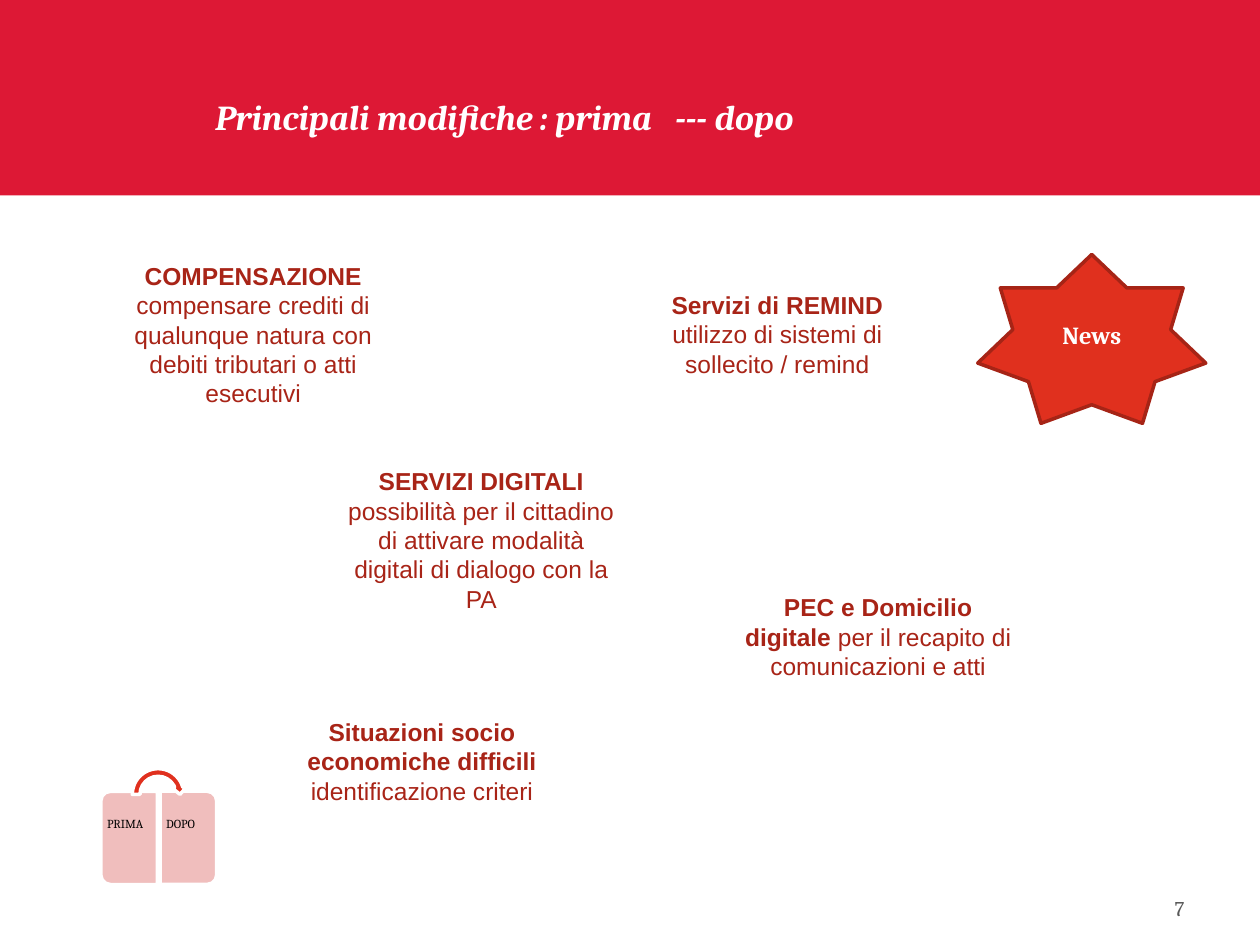
from collections import namedtuple
from dataclasses import dataclass

from lxml import etree
from pptx import Presentation
from pptx.dml.color import RGBColor
from pptx.enum.shapes import MSO_SHAPE
from pptx.enum.text import MSO_ANCHOR, MSO_AUTO_SIZE, PP_ALIGN
from pptx.oxml.ns import qn
from pptx.util import Inches, Pt

RECTANGLE = MSO_SHAPE.RECTANGLE
STAR = MSO_SHAPE.STAR_7_POINT
HALF_PANEL = MSO_SHAPE.ROUND_2_SAME_RECTANGLE
CIRCULAR_ARROW = MSO_SHAPE.CIRCULAR_ARROW
LEFT, CENTER, RIGHT = PP_ALIGN.LEFT, PP_ALIGN.CENTER, PP_ALIGN.RIGHT
TOP, MIDDLE, BOTTOM = MSO_ANCHOR.TOP, MSO_ANCHOR.MIDDLE, MSO_ANCHOR.BOTTOM
NO_AUTOFIT = MSO_AUTO_SIZE.NONE
TITLE_ONLY = 5

Box = namedtuple("Box", "left top width height")


@dataclass(frozen=True)
class Theme:
    banner: str = "DD1835"
    accent: str = "E0301E"
    accent_line: str = "A62416"
    topic: str = "A82417"
    panel: str = "F0BEBD"
    white: str = "FFFFFF"
    black: str = "000000"
    grey: str = "595959"
    serif: str = "Cambria"
    sans: str = "Arial"
    title_size: int = 20
    body_size: int = 14
    number_size: int = 12
    label_size: int = 7
    line_width: int = 2


THEME = Theme()

TOPICS = [
    (0.83, 2.02, 1.28, "COMPENSAZIONE",
     "compensare crediti di qualunque natura con debiti tributari o atti esecutivi"),
    (2.64, 3.65, 1.28, "SERVIZI DIGITALI",
     "possibilità per il cittadino di attivare modalità digitali di dialogo con la PA"),
    (4.99, 2.25, 0.81, "Servizi di REMIND", "utilizzo di sistemi di sollecito / remind"),
    (2.17, 5.64, 0.81, "Situazioni socio economiche difficili", "identificazione criteri"),
    (5.79, 4.65, 0.81, "PEC e Domicilio digitale", "per il recapito di comunicazioni e atti"),
]
TOPIC_WIDTH = 2.36


def inches(box):
    return [Inches(length) for length in box]


def add_run(paragraph, text, color, **font_format):
    run = paragraph.add_run()
    run.text = text
    for name, value in font_format.items():
        setattr(run.font, name, value)
    run.font.color.rgb = RGBColor.from_string(color)


def format_frame(text_frame, **frame_format):
    settings = {"word_wrap": True, "auto_size": NO_AUTOFIT, **frame_format}
    for name, value in settings.items():
        setattr(text_frame, name, value)


def add_text_box(shapes, box, alignment, **frame_format):
    text_frame = shapes.add_textbox(*inches(box)).text_frame
    format_frame(text_frame, **frame_format)
    paragraph = text_frame.paragraphs[0]
    paragraph.alignment = alignment
    return paragraph


def add_filled_shape(shapes, kind, box, fill, line=None):
    shape = shapes.add_shape(kind, *inches(box))
    shape.shadow.inherit = False
    shape.fill.solid()
    shape.fill.fore_color.rgb = RGBColor.from_string(fill)
    if line:
        shape.line.color.rgb = RGBColor.from_string(line)
        shape.line.width = Pt(THEME.line_width)
    else:
        shape.line.fill.background()
    return shape


def add_banner(slide, box):
    banner = add_filled_shape(slide.shapes, RECTANGLE, box, THEME.banner)
    slide.shapes._spTree.insert(2, banner._element)


def add_title(slide, box, tab_position):
    title = slide.shapes.title
    for name, length in zip(box._fields, inches(box)):
        setattr(title, name, length)
    format_frame(title.text_frame, vertical_anchor=BOTTOM)
    paragraph = title.text_frame.paragraphs[0]
    tabs = etree.SubElement(paragraph._p.get_or_add_pPr(), qn("a:tabLst"))
    etree.SubElement(tabs, qn("a:tab"), pos=str(Inches(tab_position)), algn="l")
    paragraph.alignment = LEFT
    add_run(paragraph, "Principali modifiche : prima\t--- dopo", THEME.white,
            name=THEME.serif, size=Pt(THEME.title_size), bold=True, italic=True)


def add_topic(slide, box, heading, detail):
    paragraph = add_text_box(slide.shapes, box, CENTER)
    for text, bold in ((heading + " ", True), (detail, False)):
        add_run(paragraph, text, THEME.topic, name=THEME.sans,
                size=Pt(THEME.body_size), bold=bold)


def add_news_star(slide, box):
    star = add_filled_shape(slide.shapes, STAR, box, THEME.accent, THEME.accent_line)
    format_frame(star.text_frame, vertical_anchor=MIDDLE)
    paragraph = star.text_frame.paragraphs[0]
    paragraph.alignment = CENTER
    add_run(paragraph, "News", THEME.white, name=THEME.serif,
            size=Pt(THEME.body_size), bold=True)


def add_before_after(slide, box):
    shapes = slide.shapes.add_group_shape().shapes
    panel_width, panel_height, arrow_size = 0.45, 0.74, 0.47
    panel_top = box.top + box.height - panel_height
    middle = panel_top + panel_height / 2
    panels = (
        ("PRIMA", box.left, 270, 0.02, 0.03),
        ("DOPO", box.left + box.width - panel_width, 90, -0.01, 0.06),
    )
    for label, left, rotation, label_offset, inset in panels:
        center = left + panel_width / 2
        unrotated = Box(center - panel_height / 2, middle - panel_width / 2,
                        panel_height, panel_width)
        panel = add_filled_shape(shapes, HALF_PANEL, unrotated, THEME.panel, THEME.white)
        panel.rotation = rotation
        panel.adjustments[0] = 0.17
        panel.adjustments[1] = 0
        paragraph = add_text_box(
            shapes, Box(left + label_offset, panel_top + 0.02, 0.43, 0.7), LEFT,
            margin_left=Inches(inset), margin_right=Inches(0.03),
            margin_top=Inches(0.19), margin_bottom=Inches(0.05), vertical_anchor=TOP)
        paragraph.line_spacing = 0.9
        add_run(paragraph, label, THEME.black, name=THEME.serif, size=Pt(THEME.label_size))
    arrow = add_filled_shape(shapes, CIRCULAR_ARROW,
                             Box(box.left + 0.22, box.top, arrow_size, arrow_size),
                             THEME.accent, THEME.white)
    for index, value in enumerate((0.13, 11.42, 204.58, 108, 0.13)):
        arrow.adjustments[index] = value


def add_slide_number(slide, box):
    paragraph = add_text_box(slide.shapes, box, RIGHT)
    add_run(paragraph, "7", THEME.grey, name=THEME.serif, size=Pt(THEME.number_size))


def main():
    presentation = Presentation()
    presentation.slide_width = Inches(10)
    presentation.slide_height = Inches(7.5)
    slide = presentation.slides.add_slide(presentation.slide_layouts[TITLE_ONLY])
    add_banner(slide, Box(0, 0, 10, 1.55))
    add_title(slide, Box(1.61, 0.66, 6.61, 0.48), 3.65)
    add_before_after(slide, Box(0.8, 6.07, 0.92, 0.95))
    add_slide_number(slide, Box(7.17, 7.06, 2.33, 0.29))
    add_news_star(slide, Box(7.76, 2.02, 1.81, 1.34))
    for left, top, height, heading, detail in TOPICS:
        add_topic(slide, Box(left, top, TOPIC_WIDTH, height), heading, detail)
    presentation.save("out.pptx")


if __name__ == "__main__":
    main()
